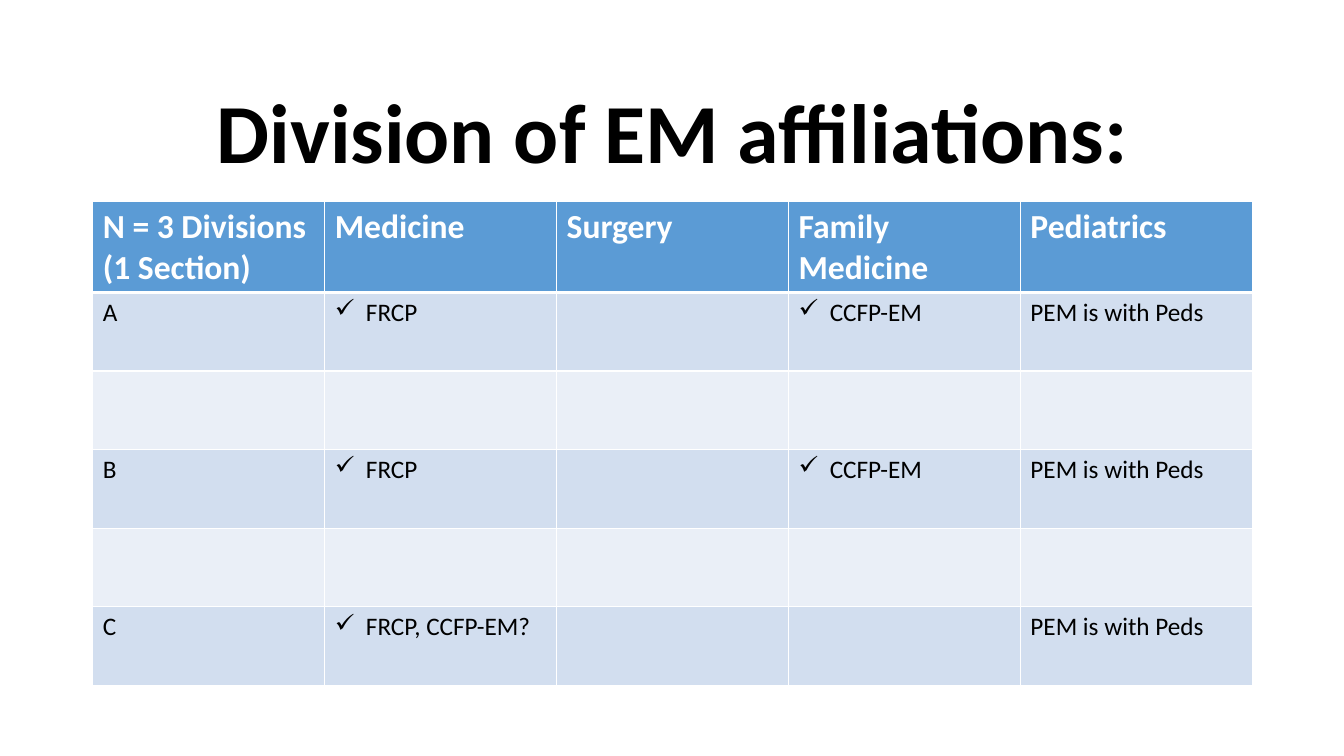
from dataclasses import dataclass
from typing import Any

from lxml.etree import SubElement
from pptx import Presentation
from pptx.dml.color import RGBColor as RGB
from pptx.enum.text import MSO_ANCHOR as Anchor, PP_ALIGN as Align
from pptx.oxml.ns import qn
from pptx.util import Inches, Pt


@dataclass(frozen=True)
class Theme:
    font: str = "Calibri"
    black: str = "000000"
    white: str = "FFFFFF"
    header: str = "5B9BD5"
    bands: tuple[str, str] = ("D2DEEF", "EAEFF7")
    title_size: int = 60
    header_size: int = 24
    body_size: int = 18
    thin: int = 1
    thick: int = 3


@dataclass(frozen=True)
class Entry:
    text: str = ""
    checked: bool = False


@dataclass(frozen=True)
class RowStyle:
    fill: str
    color: str
    size: int
    bold: bool
    top: int
    bottom: int


THEME = Theme()
LEFT, WIDTH = 0.92, 11.5
ROW_HEIGHT = 0.78
CHECK_INDENT = Inches(0.31)

BLANK, FRCP = Entry(), Entry("FRCP", True)
CCFP, PEDS = Entry("CCFP-EM", True), Entry("PEM is with Peds")
HEADINGS = ["N = 3 Divisions\n(1 Section)", "Medicine", "Surgery", "Family Medicine", "Pediatrics"]
ROWS: list[list[Entry]] = [
    [Entry(h) for h in HEADINGS],
    [Entry("A"), FRCP, BLANK, CCFP, PEDS],
    [BLANK] * len(HEADINGS),
    [Entry("B"), FRCP, BLANK, CCFP, PEDS],
    [BLANK] * len(HEADINGS),
    [Entry("C"), Entry("FRCP, CCFP-EM?", True), BLANK, BLANK, PEDS],
]


def apply(target: Any, values: dict[str, Any]) -> None:
    for name, value in values.items():
        setattr(target, name, value)


def format_font(font: Any, size: int, color: str, bold: bool) -> None:
    apply(font, {"name": THEME.font, "size": Pt(size), "bold": bold})
    font.color.rgb = RGB.from_string(color)


def add_check(p: Any) -> None:
    pPr = p._p.get_or_add_pPr()
    pPr.set("marL", str(CHECK_INDENT))
    pPr.set("indent", str(-CHECK_INDENT))
    SubElement(pPr, qn("a:buChar")).set("char", "✓")


def add_borders(cell: Any, top: int, bottom: int) -> None:
    tcPr = cell._tc.get_or_add_tcPr()
    for side, width in {"L": THEME.thin, "R": THEME.thin, "T": top, "B": bottom}.items():
        ln = SubElement(tcPr, qn(f"a:ln{side}"), w=str(Pt(width)))
        fill = SubElement(ln, qn("a:solidFill"))
        SubElement(fill, qn("a:srgbClr"), val=THEME.white)


def row_style(i: int) -> RowStyle:
    t = THEME
    if i == 0:
        return RowStyle(t.header, t.white, t.header_size, True, t.thin, t.thick)
    top = t.thick if i == 1 else t.thin
    return RowStyle(t.bands[(i - 1) % 2], t.black, t.body_size, False, top, t.thin)


def draw_cell(cell: Any, entry: Entry, style: RowStyle) -> None:
    add_borders(cell, style.top, style.bottom)
    cell.fill.solid()
    cell.fill.fore_color.rgb = RGB.from_string(style.fill)
    if not entry.text:
        return
    cell.text = entry.text
    for p in cell.text_frame.paragraphs:
        if entry.checked:
            add_check(p)
        for r in p.runs:
            format_font(r.font, style.size, style.color, style.bold)


def draw_title(slide: Any, text: str) -> None:
    sp = slide.shapes.add_textbox(Inches(LEFT), Inches(0.4), Inches(WIDTH), Inches(1.45))
    tf = sp.text_frame
    apply(tf, {"word_wrap": True, "vertical_anchor": Anchor.BOTTOM})
    p = tf.paragraphs[0]
    apply(p, {"alignment": Align.CENTER, "line_spacing": 0.9})
    r = p.add_run()
    r.text = text
    format_font(r.font, THEME.title_size, THEME.black, True)


def draw_table(slide: Any, rows: list[list[Entry]]) -> None:
    table = slide.shapes.add_table(
        len(rows), len(rows[0]), Inches(LEFT), Inches(2),
        Inches(WIDTH), Inches(ROW_HEIGHT * len(rows)),
    ).table
    for i, entries in enumerate(rows):
        table.rows[i].height = Inches(ROW_HEIGHT)
        for j, entry in enumerate(entries):
            draw_cell(table.cell(i, j), entry, row_style(i))


def main() -> None:
    prs = Presentation()
    apply(prs, {"slide_width": Inches(13.33), "slide_height": Inches(7.5)})
    slide = prs.slides.add_slide(prs.slide_layouts[6])

    # Title
    draw_title(slide, "Division of EM affiliations:")

    # Affiliation table
    draw_table(slide, ROWS)

    prs.save("out.pptx")


if __name__ == "__main__":
    main()
